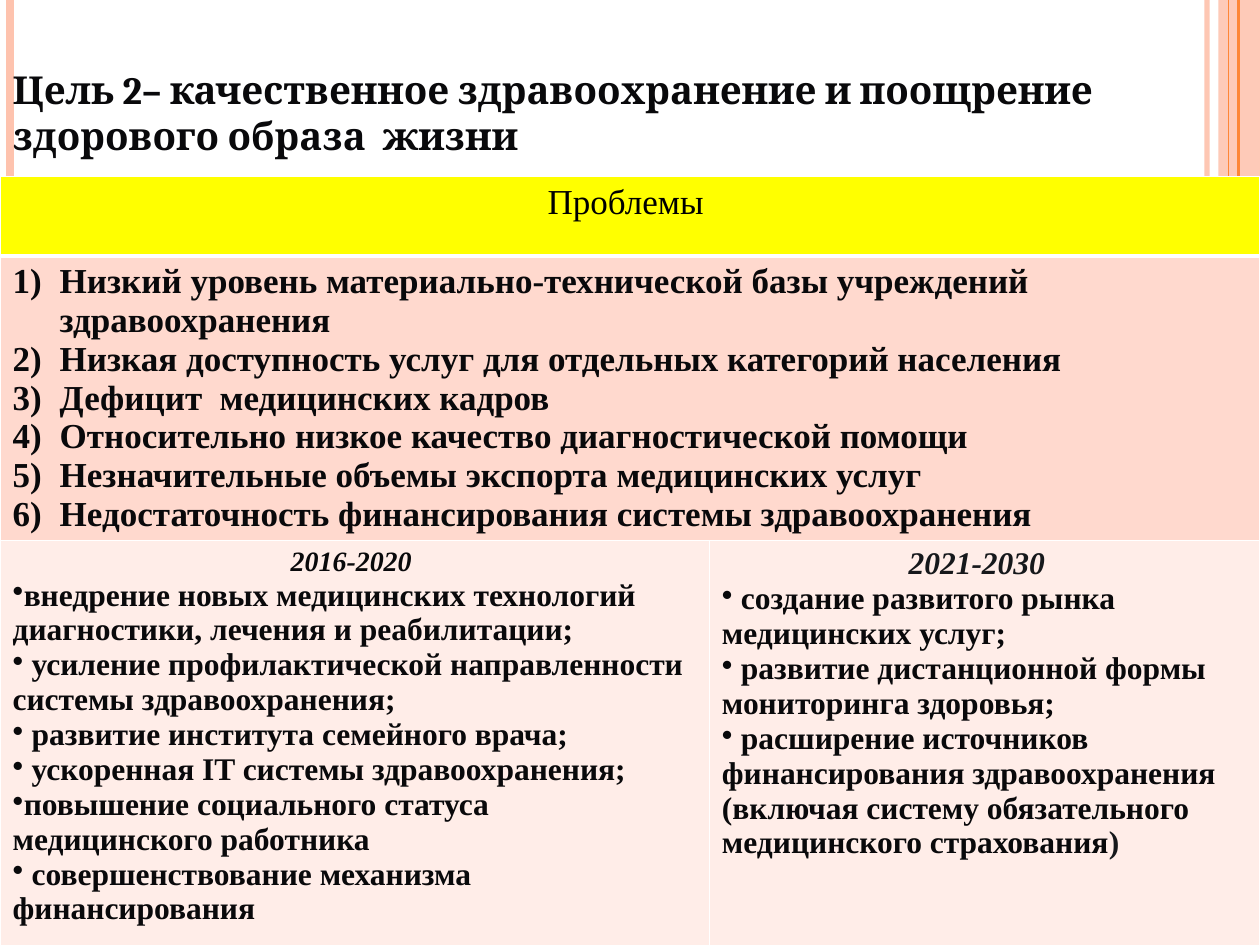
from lxml import etree
from pptx import Presentation
from pptx.dml.color import RGBColor
from pptx.enum.shapes import MSO_CONNECTOR, MSO_SHAPE
from pptx.enum.text import MSO_ANCHOR, MSO_AUTO_SIZE, PP_ALIGN
from pptx.oxml.ns import qn
from pptx.util import Cm, Pt

LEFT, CENTER = PP_ALIGN.LEFT, PP_ALIGN.CENTER
TOP = MSO_ANCHOR.TOP
NO_FIT = MSO_AUTO_SIZE.NONE
RECT = MSO_SHAPE.RECTANGLE
STRAIGHT = MSO_CONNECTOR.STRAIGHT

WIDE, HIGH = 25.4, 19.05
COLORS = {
    "peach": "FEC3AE", "orange": "FE8637", "white": "FFFFFF",
    "yellow": "FFFF00", "rose": "FFD9CE", "pale": "FFEDE8",
    "black": "000000", "ink": "09090B", "slate": "16181B",
}
SERIF, HEAD = "Times New Roman", "Cambria"

# x in cm, colour, width in points, opacity in percent
BARS = [(24.33, "peach", 3, 93), (0.2, "peach", 4.5, 100)]
RULES = [(24.97, "orange", 1.5, 100), (24.77, "orange", 0.75, 100)]
COLS = [14.3, 11.1]
ROWS = [1.6, 5.72, 8.17]

TITLE = "Цель 2– качественное здравоохранение и поощрение здорового образа  жизни"
ISSUES = [
    "Низкий уровень материально-технической базы учреждений здравоохранения",
    "Низкая доступность услуг для отдельных категорий населения",
    "Дефицит  медицинских кадров",
    "Относительно низкое качество диагностической помощи",
    "Незначительные объемы экспорта медицинских услуг",
    "Недостаточность финансирования системы здравоохранения",
]
NEAR = [
    "внедрение новых медицинских технологий диагностики, лечения и реабилитации;",
    " усиление профилактической направленности системы здравоохранения;",
    " развитие института семейного врача;",
    " ускоренная IT системы здравоохранения;",
    "повышение социального статуса медицинского работника",
    " совершенствование механизма финансирования",
]
FAR = [
    " создание развитого рынка медицинских услуг;",
    " развитие дистанционной формы мониторинга здоровья;",
    " расширение источников финансирования здравоохранения "
    "(включая систему обязательного медицинского страхования",
]


def rgb(name):
    return RGBColor.from_string(COLORS[name])


def fade(fill, percent):
    """Make the colour of a solid fill partly transparent."""
    color = fill._xPr.find(".//" + qn("a:srgbClr"))
    etree.SubElement(color, qn("a:alpha"), val=str(percent * 1000))


class Deck:
    def __init__(self):
        self.prs = Presentation()
        self.prs.slide_width, self.prs.slide_height = Cm(WIDE), Cm(HIGH)
        self.slide = self.prs.slides.add_slide(self.prs.slide_layouts[5])

    def line(self, x, color, width, percent):
        """Draw a vertical line over the full height."""
        line = self.slide.shapes.add_connector(
            STRAIGHT, Cm(x), 0, Cm(x), Cm(HIGH))
        line.line.color.rgb = rgb(color)
        line.line.width = Pt(width)
        if percent < 100:
            fade(line.line.fill, percent)
        etree.SubElement(line._element.spPr, qn("a:effectLst"))

    def band(self, x, width, color, percent):
        band = self.slide.shapes.add_shape(RECT, Cm(x), 0, Cm(width), Cm(HIGH))
        band.shadow.inherit = False
        band.fill.solid()
        band.fill.fore_color.rgb = rgb(color)
        fade(band.fill, percent)
        band.line.fill.background()

    def run(self, para, text, size, color="ink", bold=True, slant=False,
            face=SERIF):
        run = para.add_run()
        run.text = text
        font = run.font
        font.name, font.size = face, Pt(size)
        font.bold, font.italic = bold, slant
        font.color.rgb = rgb(color)

    def title(self, text):
        box = self.slide.shapes.title
        box.left, box.top = 0, Cm(1.2)
        box.width, box.height = Cm(WIDE), Cm(2.13)
        frame = box.text_frame
        frame.auto_size, frame.word_wrap = NO_FIT, True
        frame.vertical_anchor = TOP
        para = frame.paragraphs[0]
        para.alignment = LEFT
        self.run(para, text, 22, face=HEAD)
        # Bring the title in front of the table and the side lines.
        self.slide.shapes._spTree.append(box._element)

    def table(self, top):
        shape = self.slide.shapes.add_table(
            len(ROWS), len(COLS), 0, Cm(top), Cm(WIDE), Cm(sum(ROWS)))
        table = shape.table
        for col, width in zip(table.columns, COLS):
            col.width = Cm(width)
        for row, height in zip(table.rows, ROWS):
            row.height = Cm(height)
        for row, color in enumerate(["yellow", "rose", "pale"]):
            for col in range(len(COLS)):
                self.paint(table.cell(row, col), color, row == 0)
        for row in (0, 1):
            table.cell(row, 0).merge(table.cell(row, 1))
        return table

    def paint(self, cell, color, thick):
        """Give a cell its white borders and its fill."""
        props = cell._tc.get_or_add_tcPr()
        for side in "LRTB":
            width = Pt(3 if thick and side == "B" else 1)
            edge = etree.SubElement(props, qn("a:ln" + side), w=str(width))
            fill = etree.SubElement(edge, qn("a:solidFill"))
            etree.SubElement(fill, qn("a:srgbClr"), val=COLORS["white"])
        cell.fill.solid()
        cell.fill.fore_color.rgb = rgb(color)

    def head(self, cell, text, size, **style):
        para = cell.text_frame.paragraphs[0]
        para.alignment = CENTER
        self.run(para, text, size, **style)

    def list(self, cell, items, size, kind, value, indent=0):
        """Add bulleted or numbered items, and return the last paragraph."""
        frame = cell.text_frame
        for item in items:
            para = frame.paragraphs[0]
            if para.runs:
                para = frame.add_paragraph()
            para.alignment = LEFT
            props = para._p.get_or_add_pPr()
            props.set("marL", str(Cm(indent)))
            props.set("indent", str(-Cm(indent)))
            key = "char" if kind == "buChar" else "type"
            etree.SubElement(props, qn("a:" + kind), {key: value})
            self.run(para, item, size)
        return para


def main():
    deck = Deck()
    for bar in BARS:
        deck.line(*bar)
    deck.band(24.56, 0.84, "peach", 87)
    for rule in RULES:
        deck.line(*rule)

    table = deck.table(3.56)
    deck.head(table.cell(0, 0), "Проблемы ", 20, color="black", bold=False)
    deck.list(table.cell(1, 0), ISSUES, 20, "buAutoNum", "arabicParenR", 0.95)
    near, far = table.cell(2, 0), table.cell(2, 1)
    deck.head(near, "2016-2020 ", 16, slant=True)
    deck.list(near, NEAR, 18, "buChar", "•")
    deck.head(far, "2021-2030  ", 18, color="slate", slant=True)
    last = deck.list(far, FAR, 18, "buChar", "•")
    deck.run(last, ")", 18, color="slate")

    deck.title(TITLE)
    deck.prs.save("out.pptx")


if __name__ == "__main__":
    main()
